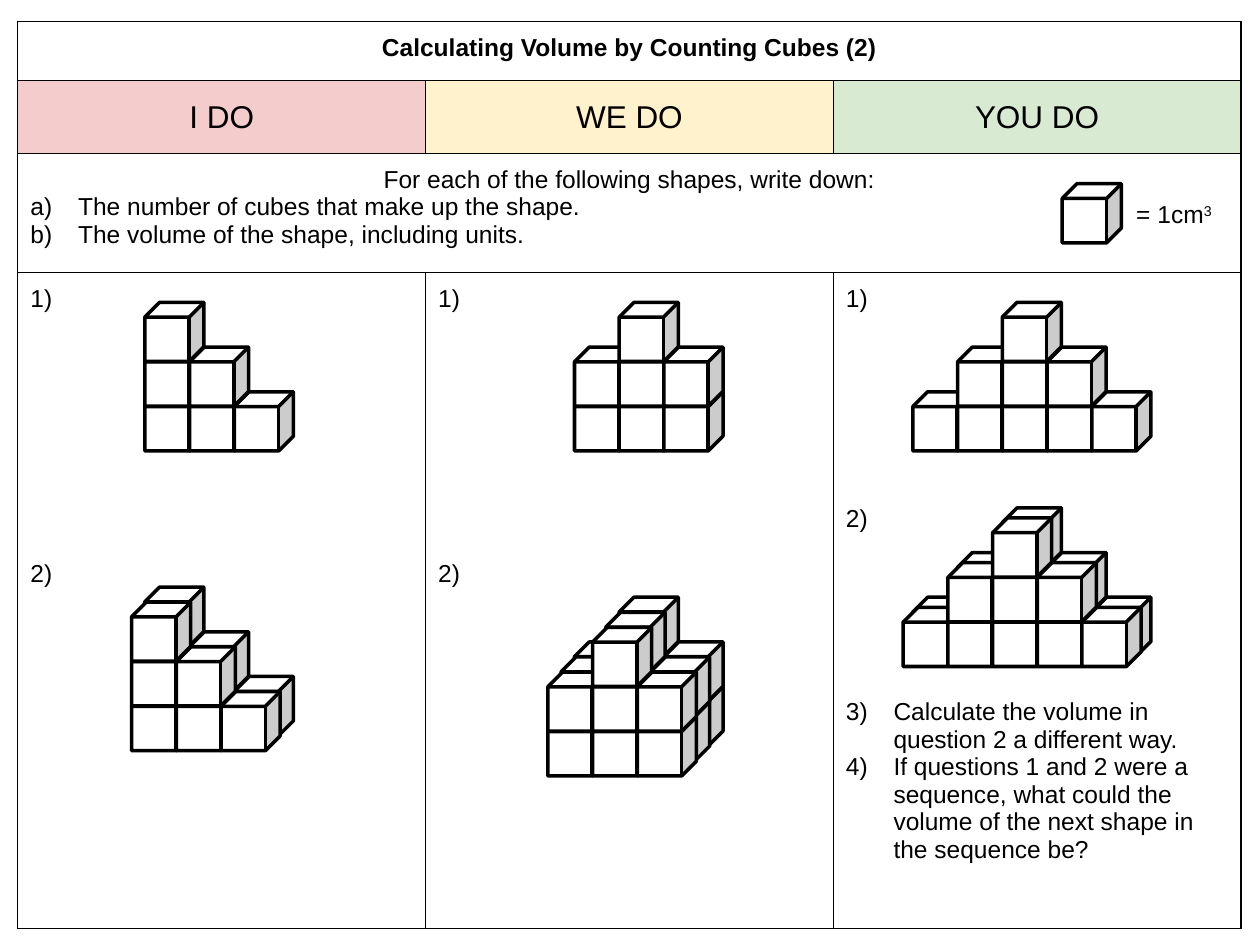
from lxml import etree
from pptx import Presentation
from pptx import util as u
from pptx.dml.color import RGBColor
from pptx.enum import shapes, text
from pptx.oxml.ns import qn

BLACK, WHITE = "000000", "FFFFFF"
CUBE = 33.8    # outer size of one cube
STEP = 25.55   # distance between neighbouring cubes
LINE = 15.75   # height of one text line
LETTERS, NUMBERS = "alphaLcParenR", "arabicParenR"


def color(hex_value):
    return RGBColor.from_string(hex_value)


def add_xml(parent, tag, **attributes):
    return etree.SubElement(parent, qn(tag), attributes)


class Worksheet:
    font = {"name": "Arial", "size": u.Pt(14), "bold": False}
    cell_format = dict.fromkeys(
        ("margin_left", "margin_right", "margin_top", "margin_bottom"), u.Pt(7.2))

    def __init__(self, slide):
        self.slide = slide

    def run(self, paragraph, words, **changes):
        run = paragraph.add_run()
        run.text = words
        for key, value in {**self.font, **changes}.items():
            setattr(run.font, key, value)
        run.font.color.rgb = color(BLACK)
        return run

    def table(self, left, top, widths, heights):
        frame = self.slide.shapes.add_table(
            len(heights), len(widths), u.Pt(left), u.Pt(top),
            u.Pt(sum(widths)), u.Pt(sum(heights)))
        table = frame.table
        table.first_row = table.horz_banding = False
        for column, width in zip(table.columns, widths):
            column.width = u.Pt(width)
        for row, height in zip(table.rows, heights):
            row.height = u.Pt(height)
        for cell in table.iter_cells():
            for key, value in self.cell_format.items():
                setattr(cell, key, value)
            self.borders(cell)
            cell.fill.background()
        return table

    def borders(self, cell):
        properties = cell._tc.get_or_add_tcPr()
        for side in ("a:lnL", "a:lnR", "a:lnT", "a:lnB"):
            line = add_xml(properties, side, w=str(u.Pt(0.75)))
            add_xml(add_xml(line, "a:solidFill"), "a:srgbClr", val=BLACK)

    def centered(self, cell, words, **changes):
        paragraph = cell.text_frame.paragraphs[0]
        paragraph.alignment = text.PP_ALIGN.CENTER
        self.run(paragraph, words, **changes)

    def numbered(self, paragraph, words, scheme, lines_before=0):
        paragraph.space_before = u.Pt(lines_before * LINE)
        self.run(paragraph, words)
        properties = paragraph._p.get_or_add_pPr()
        properties.set("marL", str(u.Pt(27.2)))
        properties.set("indent", str(-u.Pt(27.2)))
        add_xml(add_xml(properties, "a:buClr"), "a:srgbClr", val=BLACK)
        add_xml(properties, "a:buAutoNum", type=scheme)

    def questions(self, cell, items):
        """Fill a cell with (words, empty lines before) pairs."""
        for index, (words, gap) in enumerate(items):
            frame = cell.text_frame
            paragraph = frame.add_paragraph() if index else frame.paragraphs[0]
            self.numbered(paragraph, words, NUMBERS, gap)

    def cube(self, left, top):
        cube = self.slide.shapes.add_shape(
            shapes.MSO_SHAPE.CUBE, u.Pt(left), u.Pt(top), u.Pt(CUBE), u.Pt(CUBE))
        cube.shadow.inherit = False
        cube.fill.solid()
        cube.fill.fore_color.rgb = color(WHITE)
        cube.line.color.rgb = color(BLACK)
        cube.line.width = u.Pt(2)
        add_xml(cube.line._get_or_add_ln(), "a:round")

    def solid(self, left, top, rows, depth=1, shift=(-7.6, 8.6)):
        """Stack cubes from the back layer forward.

        left, top: the back layer's first bottom cube.
        rows: (first column, number of cubes), from the bottom up.
        """
        for layer in range(depth):
            for level, (first, count) in enumerate(rows):
                for column in range(first, first + count):
                    self.cube(left + column * STEP + layer * shift[0],
                              top - level * STEP + layer * shift[1])

    def label(self, left, top, width, height, words, superscript):
        box = self.slide.shapes.add_textbox(
            u.Pt(left), u.Pt(top), u.Pt(width), u.Pt(height))
        box.text_frame.word_wrap = False
        paragraph = box.text_frame.paragraphs[0]
        self.run(paragraph, words)
        raised = self.run(paragraph, superscript)
        raised._r.get_or_add_rPr().set("baseline", "30000")


def main():
    deck = Presentation()
    deck.slide_width, deck.slide_height = u.Inches(10), u.Inches(7.5)
    sheet = Worksheet(deck.slides.add_slide(deck.slide_layouts[6]))

    grid = sheet.table(10.2, 12.2, [233] * 3, [34, 41.5, 68, 375])
    for row in (0, 2):
        grid.cell(row, 0).merge(grid.cell(row, 2))
    sheet.centered(grid.cell(0, 0), "Calculating Volume by Counting Cubes (2)", bold=True)

    stages = (("I DO", "F4CCCC"), ("WE DO", "FFF2CC"), ("YOU DO", "D9EAD3"))
    for column, (stage, tint) in enumerate(stages):
        heading = grid.cell(1, column)
        heading.vertical_anchor = text.MSO_ANCHOR.MIDDLE
        heading.fill.solid()
        heading.fill.fore_color.rgb = color(tint)
        sheet.centered(heading, stage, size=u.Pt(18))

    task = grid.cell(2, 0)
    sheet.centered(task, "For each of the following shapes, write down:")
    for instruction in ("The number of cubes that make up the shape.",
                        "The volume of the shape, including units."):
        sheet.numbered(task.text_frame.add_paragraph(), instruction, LETTERS)

    for column in (0, 1):
        sheet.questions(grid.cell(3, column), [(" ", 0), (" ", 9)])
    sheet.questions(grid.cell(3, 2), [
        (" ", 0),
        (" ", 7),
        ("Calculate the volume in question 2 a different way.", 6),
        ("If questions 1 and 2 were a sequence, what could the volume "
         "of the next shape in the sequence be?", 0),
    ])

    sheet.cube(607, 105)
    sheet.label(642.2, 110.2, 58.3, 24.5, "= 1cm", "3")

    staircase = [(0, 3), (0, 2), (0, 1)]
    tower = [(0, 3), (0, 3), (1, 1)]
    pyramid = [(0, 5), (1, 3), (2, 1)]
    sheet.solid(82.8, 223.9, staircase)
    sheet.solid(82.8, 386.6, staircase, depth=2)
    sheet.solid(328.3, 223.9, tower)
    sheet.solid(328.3, 392.4, tower, depth=3)
    sheet.solid(521.7, 223.9, pyramid)
    sheet.solid(521.7, 341.3, pyramid, depth=2, shift=(-5.6, 5.8))

    deck.save("out.pptx")


if __name__ == "__main__":
    main()
